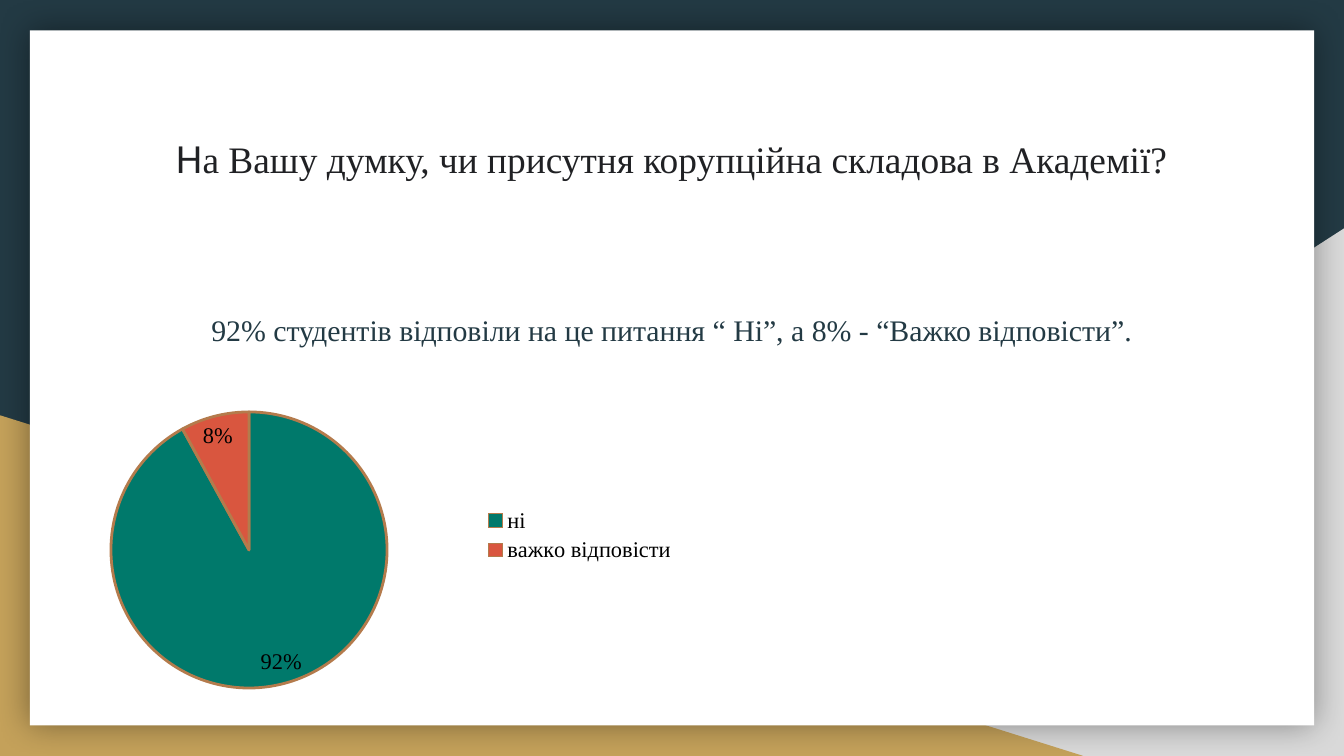
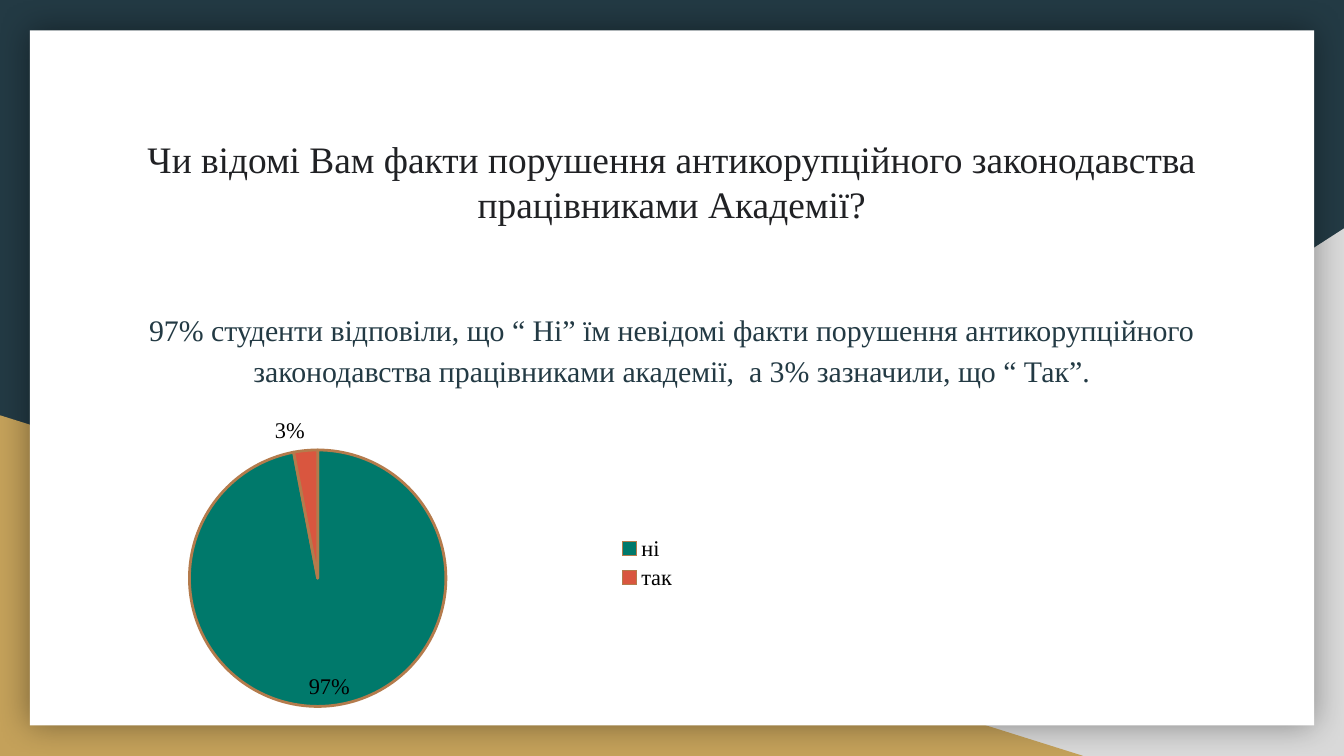
from lxml import etree
from pptx import Presentation
from pptx.chart.data import CategoryChartData
from pptx.dml.color import RGBColor
from pptx.enum.chart import XL_CHART_TYPE, XL_LABEL_POSITION, XL_LEGEND_POSITION
from pptx.enum.shapes import MSO_SHAPE
from pptx.enum.text import MSO_ANCHOR, MSO_AUTO_SIZE, PP_ALIGN
from pptx.oxml import parse_xml
from pptx.oxml.ns import nsdecls, qn
from pptx.util import Pt

PIE = XL_CHART_TYPE.PIE
BEST_FIT = XL_LABEL_POSITION.BEST_FIT
LEGEND_RIGHT = XL_LEGEND_POSITION.RIGHT
TRIANGLE, RECTANGLE = MSO_SHAPE.RIGHT_TRIANGLE, MSO_SHAPE.RECTANGLE
TOP, CENTER, NO_AUTOFIT = MSO_ANCHOR.TOP, PP_ALIGN.CENTER, MSO_AUTO_SIZE.NONE

NAVY = RGBColor(0x23, 0x3A, 0x44)
GREY = RGBColor(0xD9, 0xD9, 0xD9)
GOLD = RGBColor(0xC4, 0xA1, 0x5A)
WHITE = RGBColor(0xFF, 0xFF, 0xFF)
INK = RGBColor(0x20, 0x21, 0x24)
BLACK = RGBColor(0, 0, 0)
TEAL = RGBColor(0x00, 0x79, 0x6B)
RED = RGBColor(0xD9, 0x56, 0x3F)
BRONZE = RGBColor(0xB4, 0x7B, 0x4C)

SERIF, SANS = "Times New Roman", "Roboto"
WIDTH, HEIGHT = 720, 405
TITLE_AREA = (64.5, 66, 591, 75)
BODY_AREA = (64.5, 157, 591, 193)
FRAME = {
    "word_wrap": True, "auto_size": NO_AUTOFIT, "vertical_anchor": TOP,
    "margin_left": Pt(7.2), "margin_right": Pt(7.2),
    "margin_top": Pt(7.2), "margin_bottom": Pt(7.2),
}
TITLE_PARA = {"alignment": CENTER, "line_spacing": 1.0, "space_before": Pt(0)}
BODY_PARA = {"alignment": CENTER, "line_spacing": 1.15,
             "space_before": Pt(0), "space_after": Pt(12)}
TITLE_FONT = {"name": SERIF, "size": Pt(20), "bold": False}
BODY_FONT = {"name": SERIF, "size": Pt(16)}
CHART_FONT = {"name": SERIF, "size": Pt(12)}


def apply(target, values):
    """Set each named attribute of the target."""
    for name, value in values.items():
        setattr(target, name, value)


def style_font(font, values, color):
    """Give a font its format values and colour."""
    apply(font, values)
    font.color.rgb = color


def place(box, area):
    """Move and size a box in points."""
    apply(box, dict(zip(("left", "top", "width", "height"), map(Pt, area))))


def add_panel(page, kind, area, color):
    """Add a plain filled shape without outline."""
    panel = page.shapes.add_shape(kind, *map(Pt, area))
    panel.shadow.inherit = False
    panel.fill.solid()
    panel.fill.fore_color.rgb = color
    panel.line.fill.background()
    return panel


def add_soft_shadow(panel):
    """Put a soft dark glow around the panel."""
    effects = panel.element.spPr.find(qn("a:effectLst"))
    effects.append(parse_xml(
        f'<a:outerShdw {nsdecls("a")} blurRad="{Pt(18)}" dist="0" dir="0" '
        'algn="ctr" rotWithShape="0"><a:srgbClr val="000000">'
        '<a:alpha val="40000"/></a:srgbClr></a:outerShdw>'))


def build_backdrop(layout, page):
    """Build the shared backdrop and hand it to the layout."""
    layout.background.fill.solid()
    layout.background.fill.fore_color.rgb = NAVY
    grey = add_panel(page, TRIANGLE, (282.3, 122.4, WIDTH - 282.3, HEIGHT - 122.4), GREY)
    grey.element.spPr.find(qn("a:xfrm")).set("flipH", "1")
    gold = add_panel(page, TRIANGLE, (0, 222.5, 580.3, HEIGHT - 222.5), GOLD)
    card = add_panel(page, RECTANGLE, (16, 16.3, WIDTH - 32, 372.4), WHITE)
    add_soft_shadow(card)
    for order, panel in enumerate((grey, gold, card)):
        panel.element.nvSpPr.cNvPr.set("id", str(100 + order))
        layout.shapes.element.insert(2 + order, panel.element)


def fill_placeholder(box, area, spans, para_values, font_values, color):
    """Place a placeholder and write one paragraph of (text, font name) spans."""
    place(box, area)
    apply(box.text_frame, FRAME)
    para = box.text_frame.paragraphs[0]
    apply(para, para_values)
    for text, font_name in spans:
        span = para.add_run()
        span.text = text
        style_font(span.font, {**font_values, "name": font_name}, color)
    return para


def remove_bullet(para):
    """Drop the bullet and its indent."""
    properties = para._p.get_or_add_pPr()
    properties.set("marL", "0")
    properties.set("indent", "0")
    etree.SubElement(properties, qn("a:buNone"))


def set_plot_layout(chart, area, pie):
    """Fix the pie square given as left, top and diameter in points."""
    left, top, width, height = area
    pie_left, pie_top, diameter = pie
    parts = {"x": (pie_left - left) / width, "y": (pie_top - top) / height,
             "w": diameter / width, "h": diameter / height}
    values = "".join(f'<c:{key} val="{value:.3f}"/>' for key, value in parts.items())
    plot_area = chart.element.find(".//" + qn("c:plotArea"))
    for old in plot_area.findall(qn("c:layout")):
        plot_area.remove(old)
    plot_area.insert(0, parse_xml(
        f'<c:layout {nsdecls("c")}><c:manualLayout><c:layoutTarget val="inner"/>'
        f'<c:xMode val="edge"/><c:yMode val="edge"/>{values}'
        '</c:manualLayout></c:layout>'))


def add_pie(page, area, pie, answers):
    """Add a pie chart of the answer shares with a legend."""
    data = CategoryChartData(number_format="0%")
    data.categories = list(answers)
    data.add_series("Series 1", list(answers.values()))
    chart = page.shapes.add_chart(PIE, *map(Pt, area), data).chart
    apply(chart, {"has_title": False, "has_legend": True})
    style_font(chart.font, CHART_FONT, BLACK)
    apply(chart.legend, {"position": LEGEND_RIGHT, "include_in_layout": False})
    style_font(chart.legend.font, CHART_FONT, BLACK)
    plot = chart.plots[0]
    apply(plot, {"vary_by_categories": True, "has_data_labels": True})
    apply(plot.data_labels, {
        "show_value": True, "show_percentage": False, "number_format": "0%",
        "number_format_is_linked": False, "position": BEST_FIT})
    style_font(plot.data_labels.font, CHART_FONT, BLACK)
    for index, color in enumerate((TEAL, RED)):
        piece = plot.series[0].points[index].format
        piece.fill.solid()
        piece.fill.fore_color.rgb = color
        piece.line.color.rgb = BRONZE
        piece.line.width = Pt(1.5)
    set_plot_layout(chart, area, pie)


def add_question(page, title, answer, area, pie, answers):
    """Fill one survey page: question, summary and chart."""
    fill_placeholder(page.shapes.title, TITLE_AREA, title,
                     TITLE_PARA, TITLE_FONT, INK)
    para = fill_placeholder(page.placeholders[1], BODY_AREA, [(answer, SERIF)],
                            BODY_PARA, BODY_FONT, NAVY)
    remove_bullet(para)
    add_pie(page, area, pie, answers)


def main():
    """Build and save the survey deck."""
    deck = Presentation()
    apply(deck, {"slide_width": Pt(WIDTH), "slide_height": Pt(HEIGHT)})
    layout = deck.slide_layouts[1]
    corruption, violations = (deck.slides.add_slide(layout) for _ in range(2))
    build_backdrop(layout, corruption)
    add_question(
        corruption,
        [("Н", SANS),
         ("а Вашу думку, чи присутня корупційна складова в Академії?", SERIF)],
        "92% студентів відповіли на це питання “ Ні”, а 8% - “Важко відповісти”.",
        (9.4, 195, 360, 183.6), (59.5, 220.7, 148),
        {"ні": 0.92, "важко відповісти": 0.08})
    add_question(
        violations,
        [("Чи відомі Вам факти порушення антикорупційного законодавства "
          "працівниками Академії?", SERIF)],
        "97% студенти відповіли, що “ Ні” їм невідомі факти порушення "
        "антикорупційного законодавства працівниками академії,  а 3% "
        "зазначили, що “ Так”.",
        (10, 214.6, 360, 174.2), (101.5, 241, 137.5),
        {"ні": 0.97, "так": 0.03})
    deck.save("out.pptx")


if __name__ == "__main__":
    main()
